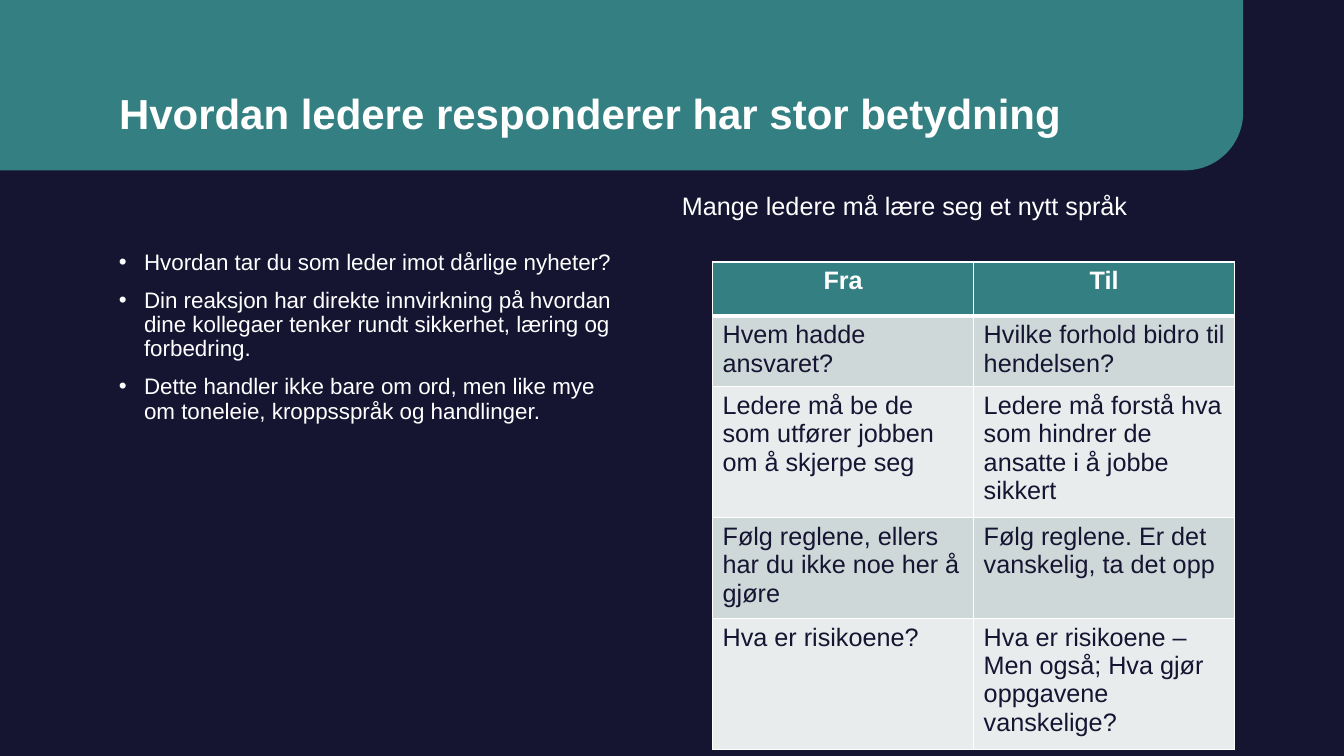
"""Builds a slide on how leaders respond, with bullets and a from-to table."""
from dataclasses import dataclass

from lxml import etree
from pptx import Presentation
from pptx.dml.color import RGBColor
from pptx.enum.shapes import MSO_SHAPE
from pptx.enum.text import MSO_ANCHOR, MSO_AUTO_SIZE, PP_ALIGN
from pptx.oxml.ns import qn
from pptx.slide import Slide
from pptx.table import _Cell
from pptx.text.text import TextFrame, _Paragraph
from pptx.util import Pt

ROUND = MSO_SHAPE.ROUND_1_RECTANGLE
BOTTOM = MSO_ANCHOR.BOTTOM
FIXED, GROW = MSO_AUTO_SIZE.NONE, MSO_AUTO_SIZE.SHAPE_TO_FIT_TEXT
LEFT, CENTER = PP_ALIGN.LEFT, PP_ALIGN.CENTER


@dataclass(frozen=True)
class Theme:
    """Colours, font and type sizes of the slide."""
    navy: str = "151532"
    teal: str = "347F82"
    white: str = "FFFFFF"
    bands: tuple[str, str] = ("CED8D8", "E8ECED")
    font: str = "Arial"
    title: float = 30
    text: float = 18
    bullet: float = 16


@dataclass(frozen=True)
class Box:
    """A place on the slide, in points."""
    left: float
    top: float
    width: float
    height: float

    def spot(self) -> tuple[Pt, Pt, Pt, Pt]:
        """Return the place as lengths."""
        return Pt(self.left), Pt(self.top), Pt(self.width), Pt(self.height)


@dataclass(frozen=True)
class Row:
    """One table row: height in points and the two wordings."""
    height: float
    old: str
    new: str


THEME = Theme()
BANNER = Box(0, 0, 888, 121.7)
TITLE = Box(77.8, 30.2, 782.6, 72.7)
BODY = Box(77.8, 175.7, 373, 270)
LEAD = Box(480, 132.5, 480, 29)
GRID = Box(509, 187.2, 373, 326.6)
POINTS = (
    "Hvordan tar du som leder imot dårlige nyheter?",
    "Din reaksjon har direkte innvirkning på hvordan dine kollegaer tenker "
    "rundt sikkerhet, læring og forbedring.",
    "Dette handler ikke bare om ord, men like mye om toneleie, "
    "kroppsspråk og handlinger.",
)
ROWS = (
    Row(38.6, "Fra", "Til"),
    Row(47, "Hvem hadde ansvaret?", "Hvilke forhold bidro til hendelsen?"),
    Row(87, "Ledere må be de som utfører jobben om å skjerpe seg",
        "Ledere må forstå hva som hindrer de ansatte i å jobbe sikkert"),
    Row(67, "Følg reglene, ellers har du ikke noe her å gjøre",
        "Følg reglene. Er det vanskelig, ta det opp"),
    Row(87, "Hva er risikoene?",
        "Hva er risikoene – Men også; Hva gjør oppgavene vanskelige?"),
)


def style(para: _Paragraph, size: float, color: str = THEME.white,
          bold: bool = False) -> None:
    """Set the font of a paragraph."""
    font = para.font
    font.name, font.size, font.bold = THEME.font, Pt(size), bold
    font.color.rgb = RGBColor.from_string(color)


def add_banner(slide: Slide) -> None:
    """Draw the teal band behind the title."""
    band = slide.shapes.add_shape(ROUND, *BANNER.spot())
    band.adjustments[0] = 0.34
    band.shadow.inherit = False
    band.fill.solid()
    band.fill.fore_color.rgb = RGBColor.from_string(THEME.teal)
    band.line.fill.background()
    band._element.spPr.xfrm.set("flipV", "1")
    slide.shapes._spTree.insert(2, band._element)


def add_title(slide: Slide) -> None:
    """Place and format the title."""
    title = slide.shapes.title
    title.left, title.top, title.width, title.height = TITLE.spot()
    frame = title.text_frame
    frame.text = "Hvordan ledere responderer har stor betydning"
    frame.auto_size, frame.vertical_anchor = FIXED, BOTTOM
    para = frame.paragraphs[0]
    para.alignment, para.line_spacing = LEFT, 0.9
    style(para, THEME.title, bold=True)


def add_text(slide: Slide, box: Box, text: str) -> TextFrame:
    """Add a wrapping text box, one paragraph a line."""
    frame = slide.shapes.add_textbox(*box.spot()).text_frame
    frame.word_wrap = True
    frame.text = text
    return frame


def add_points(slide: Slide) -> None:
    """Add the bulleted list."""
    frame = add_text(slide, BODY, "\n".join(POINTS))
    for num, para in enumerate(frame.paragraphs):
        props = para._p.get_or_add_pPr()
        props.set("marL", str(Pt(18)))
        props.set("indent", str(-Pt(18)))
        etree.SubElement(props, qn("a:buFont"), typeface=THEME.font)
        etree.SubElement(props, qn("a:buChar"), char="•")
        para.line_spacing = 0.9
        para.space_before = Pt(10 if num else 0)
        style(para, THEME.bullet)


def add_lead(slide: Slide) -> None:
    """Add the line above the table."""
    frame = add_text(slide, LEAD, "Mange ledere må lære seg et nytt språk")
    frame.auto_size = GROW
    style(frame.paragraphs[0], THEME.text)


def edge(cell: _Cell, top: float, bottom: float) -> None:
    """Give a cell white borders, in points."""
    props = cell._tc.get_or_add_tcPr()
    for side, width in (("L", 1), ("R", 1), ("T", top), ("B", bottom)):
        line = etree.SubElement(props, qn(f"a:ln{side}"), w=str(Pt(width)))
        fill = etree.SubElement(line, qn("a:solidFill"))
        etree.SubElement(fill, qn("a:srgbClr"), val=THEME.white)


def add_grid(slide: Slide) -> None:
    """Add the from-to table."""
    table = slide.shapes.add_table(len(ROWS), 2, *GRID.spot()).table
    for y, row in enumerate(ROWS):
        table.rows[y].height = Pt(row.height)
        head = y == 0
        shade = THEME.teal if head else THEME.bands[(y - 1) % 2]
        for x, text in enumerate((row.old, row.new)):
            cell = table.cell(y, x)
            cell.text = text
            edge(cell, 3 if y == 1 else 1, 3 if head else 1)
            cell.fill.solid()
            cell.fill.fore_color.rgb = RGBColor.from_string(shade)
            para = cell.text_frame.paragraphs[0]
            para.alignment = CENTER if head else LEFT
            style(para, THEME.text, THEME.white if head else THEME.navy, head)


def main() -> None:
    """Build and save the slide."""
    deck = Presentation()
    deck.slide_width, deck.slide_height = Pt(960), Pt(540)
    slide = deck.slides.add_slide(deck.slide_layouts[5])
    back = slide.background.fill
    back.solid()
    back.fore_color.rgb = RGBColor.from_string(THEME.navy)
    for draw in (add_banner, add_points, add_grid, add_title, add_lead):
        draw(slide)
    deck.save("out.pptx")


if __name__ == "__main__":
    main()
